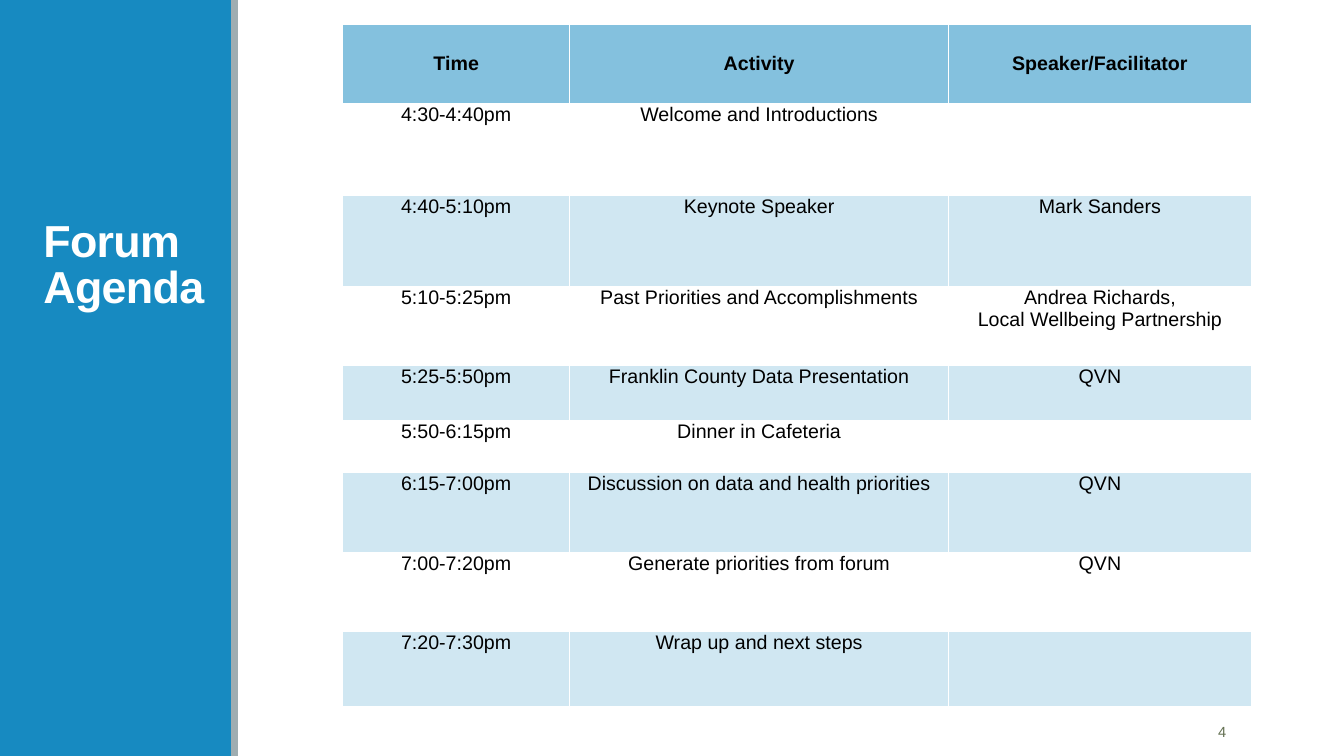
from lxml.etree import SubElement
from pptx import Presentation
from pptx.dml.color import RGBColor
from pptx.enum.shapes import MSO_SHAPE as Shape
from pptx.enum.text import MSO_ANCHOR as Anchor, MSO_AUTO_SIZE as Fit, PP_ALIGN as Align
from pptx.oxml.ns import qn
from pptx.util import Inches, Pt

COLORS = {"blue": "178AC1", "gray": "9FADB1", "white": "FFFFFF",
          "black": "000000", "olive": "637052"}
WIDTHS = [2.25, 3.76, 3]
HEIGHTS = [0.79, 0.91, 0.9, 0.79, 0.54, 0.52, 0.79, 0.79, 0.74]
AGENDA = [
    ("Time", "Activity", "Speaker/Facilitator"),
    ("4:30-4:40pm", "Welcome and Introductions", ""),
    ("4:40-5:10pm", "Keynote Speaker", "Mark Sanders"),
    ("5:10-5:25pm", "Past Priorities and Accomplishments",
     "Andrea Richards,\nLocal Wellbeing Partnership"),
    ("5:25-5:50pm", "Franklin County Data Presentation", "QVN"),
    ("5:50-6:15pm", "Dinner in Cafeteria", ""),
    ("6:15-7:00pm", "Discussion on data and health priorities", "QVN"),
    ("7:00-7:20pm", "Generate priorities from forum", "QVN"),
    ("7:20-7:30pm", "Wrap up and next steps", ""),
]


def color(name):
    return RGBColor.from_string(COLORS[name])


def style(para, size, tint, align, bold=False):
    para.alignment = align
    font = para.font
    font.name, font.size, font.bold = "Arial", Pt(size), bold
    font.color.rgb = color(tint)


def add_bar(slide, left, width, tint):
    """Add a full-height bar behind the placeholders."""
    bar = slide.shapes.add_shape(
        Shape.RECTANGLE, Inches(left), 0, Inches(width), Inches(7.5))
    bar.shadow.inherit = False
    bar.fill.solid()
    bar.fill.fore_color.rgb = color(tint)
    bar.line.fill.background()
    slide.shapes._spTree.insert(2, bar._element)


def set_title(slide, text):
    title = slide.shapes.title
    title.left, title.top = Inches(0.33), Inches(0.65)
    title.width, title.height = Inches(2.87), Inches(2.5)
    frame = title.text_frame
    frame.text = text
    frame.word_wrap = True
    frame.auto_size = Fit.NONE
    frame.vertical_anchor = Anchor.BOTTOM
    para = frame.paragraphs[0]
    style(para, 32, "white", Align.LEFT, True)
    para.line_spacing = 0.85
    para.runs[0]._r.get_or_add_rPr().set("spc", "-50")


def add_edges(cell, sides):
    props = cell._tc.get_or_add_tcPr()
    for side in sides:
        line = SubElement(props, qn(f"a:ln{side}"), w=str(Pt(1)))
        fill = SubElement(line, qn("a:solidFill"))
        SubElement(fill, qn("a:srgbClr"), val=COLORS["white"])


def fill_cell(cell, alpha):
    """Fill with blue at alpha percent, or leave clear at zero."""
    if not alpha:
        cell.fill.background()
        return
    cell.fill.solid()
    cell.fill.fore_color.rgb = color("blue")
    tint = cell._tc.tcPr.find(qn("a:solidFill"))[0]
    SubElement(tint, qn("a:alpha"), val=str(alpha * 1000))


def set_cell(cell, text, row, col):
    head = row == 0
    cell.text = text
    cell.margin_left = cell.margin_right = 0
    cell.margin_top = cell.margin_bottom = 0
    cell.vertical_anchor = Anchor.MIDDLE if head else Anchor.TOP
    for para in cell.text_frame.paragraphs:
        style(para, 14, "black", Align.CENTER, head)
    inner = {"L": col > 0, "R": col < len(WIDTHS) - 1,
             "T": row > 0, "B": row < len(HEIGHTS) - 1}
    add_edges(cell, [side for side, shown in inner.items() if shown])
    fill_cell(cell, 53 if head else 20 if row % 2 == 0 else 0)


def add_agenda(slide):
    table = slide.shapes.add_table(
        len(HEIGHTS), len(WIDTHS), Inches(3.4), Inches(0.24),
        Inches(sum(WIDTHS)), Inches(sum(HEIGHTS))).table
    table.first_row = table.horz_banding = False
    for col, width in zip(table.columns, WIDTHS):
        col.width = Inches(width)
    for row, height in zip(table.rows, HEIGHTS):
        row.height = Inches(height)
    for row, texts in enumerate(AGENDA):
        for col, text in enumerate(texts):
            set_cell(table.cell(row, col), text, row, col)


def add_number(slide, text):
    box = slide.shapes.add_textbox(
        Inches(10.83), Inches(7.06), Inches(1.43), Inches(0.4))
    frame = box.text_frame
    frame.text = text
    frame.word_wrap = True
    frame.vertical_anchor = Anchor.MIDDLE
    style(frame.paragraphs[0], 10.5, "olive", Align.RIGHT)


def main():
    deck = Presentation()
    deck.slide_width, deck.slide_height = Inches(13.33), Inches(7.5)
    slide = deck.slides.add_slide(deck.slide_layouts[5])
    add_bar(slide, 0, 2.29, "blue")
    add_bar(slide, 2.29, 0.07, "gray")
    set_title(slide, "Forum Agenda")
    add_agenda(slide)
    add_number(slide, "4")
    deck.save("out.pptx")


if __name__ == "__main__":
    main()
